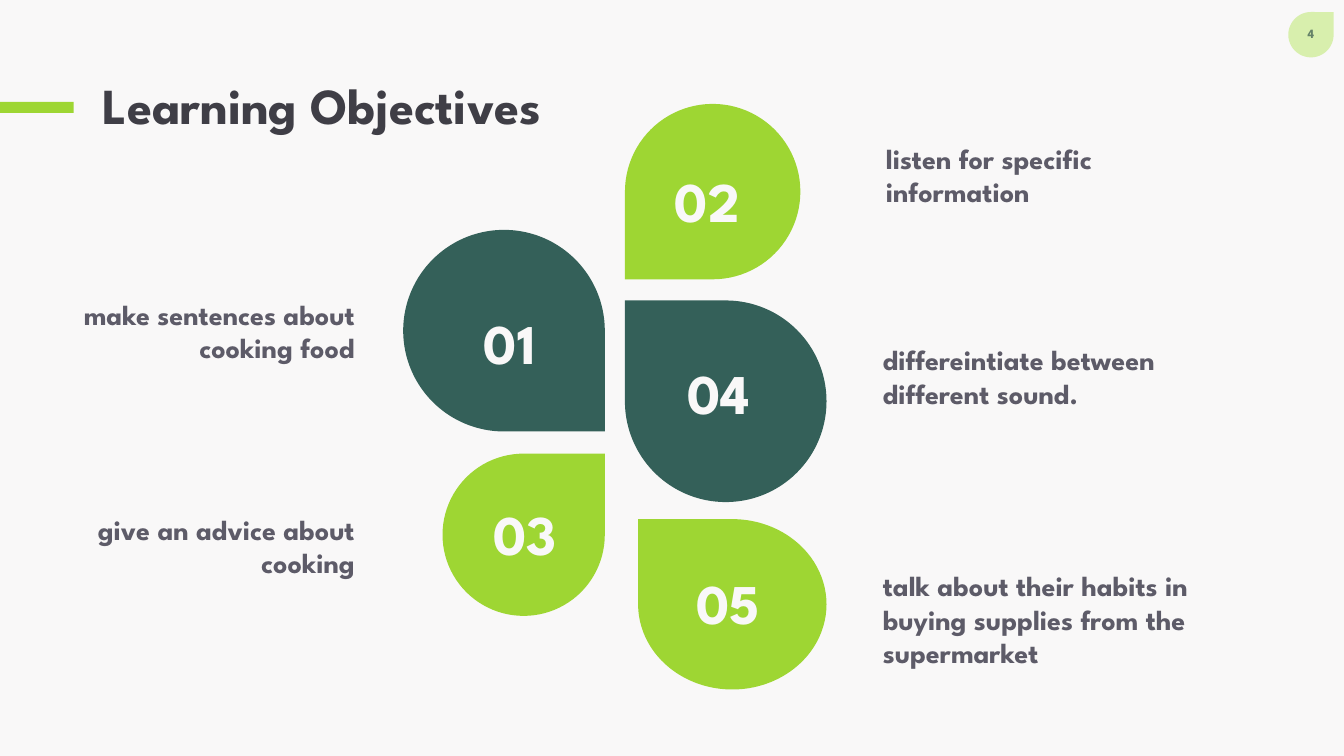
from dataclasses import dataclass

from pptx import Presentation
from pptx.dml.color import RGBColor
from pptx.enum.shapes import MSO_SHAPE
from pptx.enum.text import MSO_ANCHOR, PP_ALIGN
from pptx.util import Pt


@dataclass(frozen=True)
class Theme:
    font: str = "League Spartan"
    background: str = "F9F8F8"
    lime: str = "9ED633"
    pale_lime: str = "D8EFAD"
    teal: str = "346059"
    title: str = "3F3E46"
    body: str = "5D5B68"
    page: str = "658268"
    title_size: int = 36
    body_size: int = 20
    number_size: int = 40
    page_size: int = 9


THEME = Theme()

# Clockwise turn that brings the teardrop's tip to each corner
TIP_ROTATION = {"top right": 0, "bottom right": 90, "bottom left": 180, "top left": 270}

NUMBER_BOX = (62.6, 55.4)

# Number, colour, tip corner, petal box, number position, text box, alignment
OBJECTIVES = [
    ("01", THEME.teal, "bottom right", (288, 164.2, 144, 144), (326.9, 216.7),
     "make sentences about cooking food", (47.5, 208.8, 213.1, 55.4), PP_ALIGN.RIGHT),
    ("02", THEME.lime, "bottom left", (446.4, 74.2, 125.3, 125.3), (473, 115.2),
     "listen for specific information", (625.7, 97.2, 213.1, 55.4), PP_ALIGN.LEFT),
    ("03", THEME.lime, "top right", (316.1, 324, 115.9, 115.9), (342, 353.5),
     "give an advice about cooking", (47.5, 362.2, 213.1, 55.4), PP_ALIGN.RIGHT),
    ("04", THEME.teal, "top left", (446.4, 214.6, 144, 144), (480.2, 252.7),
     "differeintiate between different sound.", (623.5, 241.2, 250.6, 55.4), PP_ALIGN.LEFT),
    ("05", THEME.lime, "top left", (455.8, 370.8, 134.6, 121.7), (487.4, 402.5),
     "talk about their habits in buying supplies from the supermarket",
     (623.5, 402.5, 250.6, 79.9), PP_ALIGN.LEFT),
]


def add_filled_shape(slide, kind, box, color):
    shape = slide.shapes.add_shape(kind, *map(Pt, box))
    shape.shadow.inherit = False
    shape.fill.solid()
    shape.fill.fore_color.rgb = RGBColor.from_string(color)
    shape.line.fill.background()
    return shape


def add_petal(slide, box, color, tip):
    """Fill the visible box with a teardrop whose tip is at the given corner."""
    left, top, width, height = box
    rotation = TIP_ROTATION[tip]
    if rotation % 180:  # a quarter turn swaps the sides around the centre
        left, top = left + (width - height) / 2, top + (height - width) / 2
        width, height = height, width
    petal = add_filled_shape(slide, MSO_SHAPE.TEAR, (left, top, width, height), color)
    petal.rotation = rotation


def add_text(slide, text, box, size, color, alignment=PP_ALIGN.LEFT,
             anchor=MSO_ANCHOR.TOP, line_spacing=None):
    frame = slide.shapes.add_textbox(*map(Pt, box)).text_frame
    frame.word_wrap = True
    frame.vertical_anchor = anchor
    paragraph = frame.paragraphs[0]
    paragraph.text = text
    paragraph.alignment = alignment
    paragraph.line_spacing = line_spacing
    paragraph.font.name = THEME.font
    paragraph.font.size = Pt(size)
    paragraph.font.bold = True
    paragraph.font.color.rgb = RGBColor.from_string(color)


def add_objective(slide, number, color, tip, petal_box, number_position,
                  text, text_box, alignment):
    add_petal(slide, petal_box, color, tip)
    add_text(slide, number, number_position + NUMBER_BOX, THEME.number_size,
             THEME.background, PP_ALIGN.RIGHT)
    add_text(slide, text, text_box, THEME.body_size, THEME.body, alignment)


def main():
    presentation = Presentation()
    presentation.slide_width, presentation.slide_height = Pt(960), Pt(540)
    slide = presentation.slides.add_slide(presentation.slide_layouts[6])
    slide.background.fill.solid()
    slide.background.fill.fore_color.rgb = RGBColor.from_string(THEME.background)

    # Page number badge
    add_petal(slide, (920.2, 8.6, 32.4, 32.4), THEME.pale_lime, "top right")
    add_text(slide, "4", (920.2, 15.1, 32.4, 19.4), THEME.page_size, THEME.page,
             PP_ALIGN.CENTER)

    # Title with its accent bar
    add_filled_shape(slide, MSO_SHAPE.RECTANGLE, (0, 72.7, 52.6, 7.9), THEME.lime)
    add_text(slide, "Learning Objectives", (66.2, 28.8, 712.8, 96.5), THEME.title_size,
             THEME.title, anchor=MSO_ANCHOR.MIDDLE, line_spacing=0.9)

    # Numbered petals and their texts
    for objective in OBJECTIVES:
        add_objective(slide, *objective)

    presentation.save("out.pptx")


if __name__ == "__main__":
    main()
